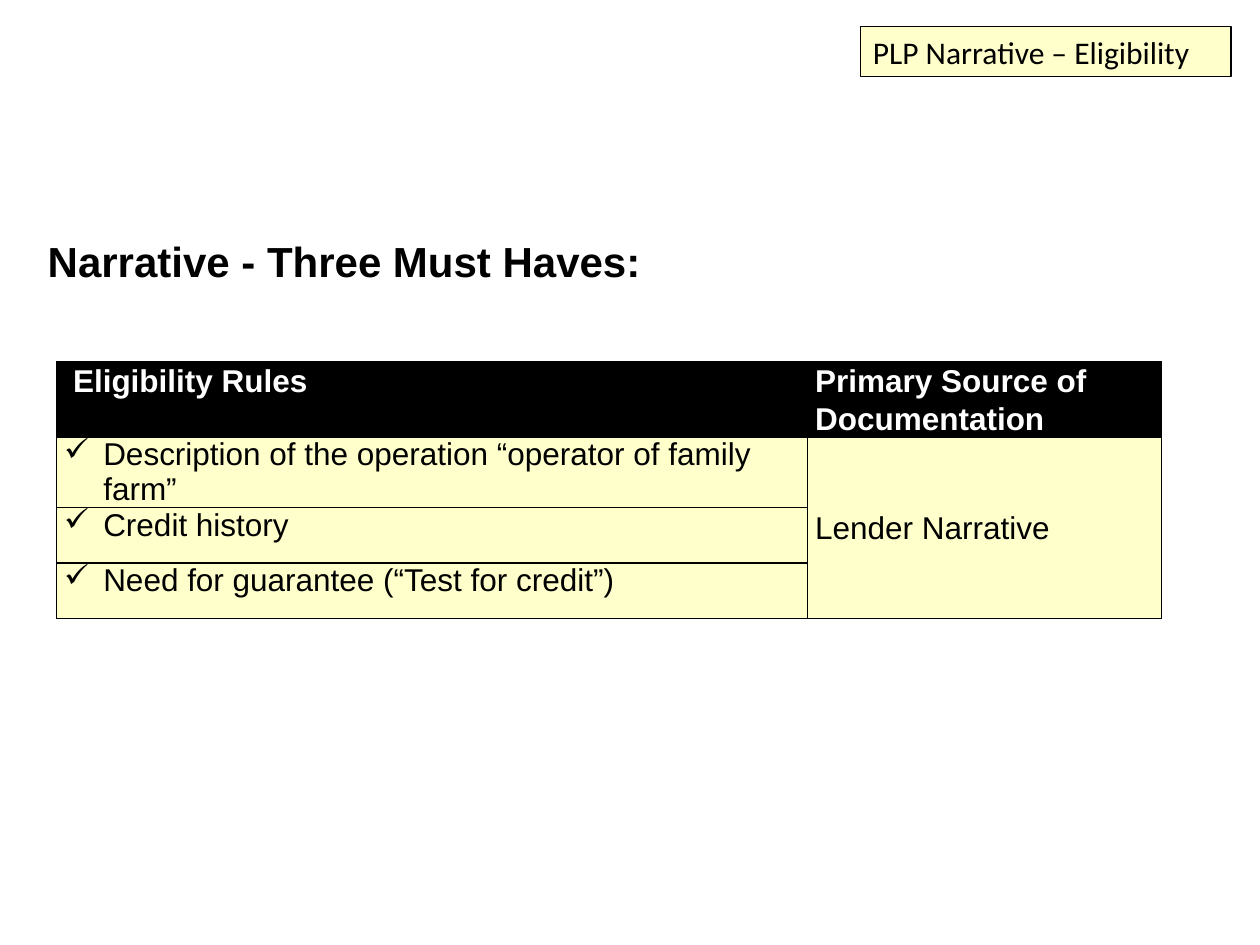
"""Build the eligibility narrative slide with its table of three must-haves."""
from dataclasses import dataclass

from lxml import etree
from pptx import Presentation
from pptx import util as u
from pptx.dml.color import RGBColor
from pptx.enum import shapes, text
from pptx.oxml import ns

TAG = "PLP Narrative – Eligibility"
HEADING = "Narrative - Three Must Haves:"
HEADERS = ["Eligibility Rules", "Primary Source of Documentation"]
RULES = [
    "Description of the operation “operator of family farm”",
    "Credit history",
    "Need for guarantee (“Test for credit”)",
]
SOURCE = "Lender Narrative"

TAG_BOX = (6.83, 0.21, 2.94, 0.4)
HEADING_BOX = (0.28, 1.82, 4.95, 0.5)
TABLE_ORIGIN = (0.45, 2.87)
COLUMNS = (5.96, 2.81)
ROW_HEIGHT = 0.44
CELL_MARGIN = 0.06
HEADER_INDENT = 0.07
BULLET_INDENT = 0.31


@dataclass(frozen=True)
class Theme:
    ink: str = "000000"
    paper: str = "FFFFFF"
    cream: str = "FFFFCC"
    body_font: str = "Arial"
    tag_font: str = "Calibri"
    body: int = 18
    heading: int = 24
    cell_line: float = 1
    tag_line: float = 0.75
    spacing: float = 1.07


THEME = Theme()


def inches(lengths):
    return [u.Inches(length) for length in lengths]


def paint(fill, color):
    fill.solid()
    fill.fore_color.rgb = RGBColor.from_string(color)


def write(paragraph, words, color=THEME.ink, size=THEME.body, font=THEME.body_font, bold=False):
    run = paragraph.add_run()
    run.text = words
    run.font.name, run.font.size, run.font.bold = font, u.Pt(size), bold
    run.font.color.rgb = RGBColor.from_string(color)


def add_bullet(paragraph):
    properties = paragraph._p.get_or_add_pPr()
    properties.set("marL", str(u.Inches(BULLET_INDENT)))
    properties.set("indent", str(-u.Inches(BULLET_INDENT)))
    etree.SubElement(properties, ns.qn("a:buChar"), char="✓")


def style_cell(cell, color):
    properties = cell._tc.get_or_add_tcPr()
    for side in ("lnL", "lnR", "lnT", "lnB"):
        line = etree.SubElement(properties, ns.qn(f"a:{side}"), w=str(u.Pt(THEME.cell_line)))
        solid = etree.SubElement(line, ns.qn("a:solidFill"))
        etree.SubElement(solid, ns.qn("a:srgbClr"), val=THEME.ink)
    paint(cell.fill, color)
    cell.margin_left = cell.margin_right = u.Inches(CELL_MARGIN)
    cell.margin_top = cell.margin_bottom = 0


def add_rules_table(slide):
    row_count = len(RULES) + 1
    frame = slide.shapes.add_table(
        row_count, len(COLUMNS),
        *inches((*TABLE_ORIGIN, sum(COLUMNS), ROW_HEIGHT * row_count)),
    )
    table = frame.table
    for column, width in zip(table.columns, COLUMNS):
        column.width = u.Inches(width)
    for index, row in enumerate(table.rows):
        row.height = u.Inches(ROW_HEIGHT)
        for cell in row.cells:
            style_cell(cell, THEME.cream if index else THEME.ink)

    for index, label in enumerate(HEADERS):
        paragraph = table.cell(0, index).text_frame.paragraphs[0]
        paragraph.line_spacing = THEME.spacing
        write(paragraph, label, THEME.paper, bold=True)
    table.cell(0, 0).margin_left = u.Inches(CELL_MARGIN + HEADER_INDENT)

    for index, rule in enumerate(RULES, 1):
        paragraph = table.cell(index, 0).text_frame.paragraphs[0]
        add_bullet(paragraph)
        write(paragraph, rule)

    source = table.cell(1, 1)
    source.merge(table.cell(len(RULES), 1))
    source.vertical_anchor = text.MSO_ANCHOR.MIDDLE
    paragraph = source.text_frame.paragraphs[0]
    paragraph.line_spacing = THEME.spacing
    write(paragraph, SOURCE)


def fill_box(shape, words, **style):
    frame = shape.text_frame
    frame.word_wrap = True
    frame.auto_size = text.MSO_AUTO_SIZE.SHAPE_TO_FIT_TEXT
    frame.vertical_anchor = text.MSO_ANCHOR.TOP
    frame.paragraphs[0].alignment = text.PP_ALIGN.LEFT
    write(frame.paragraphs[0], words, **style)


def add_tag(slide):
    tag = slide.shapes.add_shape(shapes.MSO_SHAPE.RECTANGLE, *inches(TAG_BOX))
    tag.shadow.inherit = False
    paint(tag.fill, THEME.cream)
    paint(tag.line.fill, THEME.ink)
    tag.line.width = u.Pt(THEME.tag_line)
    fill_box(tag, TAG, font=THEME.tag_font)


def main():
    presentation = Presentation()
    presentation.slide_width, presentation.slide_height = inches((10, 7.5))
    slide = presentation.slides.add_slide(presentation.slide_layouts[6])
    add_rules_table(slide)
    add_tag(slide)
    heading = slide.shapes.add_textbox(*inches(HEADING_BOX))
    fill_box(heading, HEADING, size=THEME.heading, bold=True)
    presentation.save("out.pptx")


if __name__ == "__main__":
    main()
